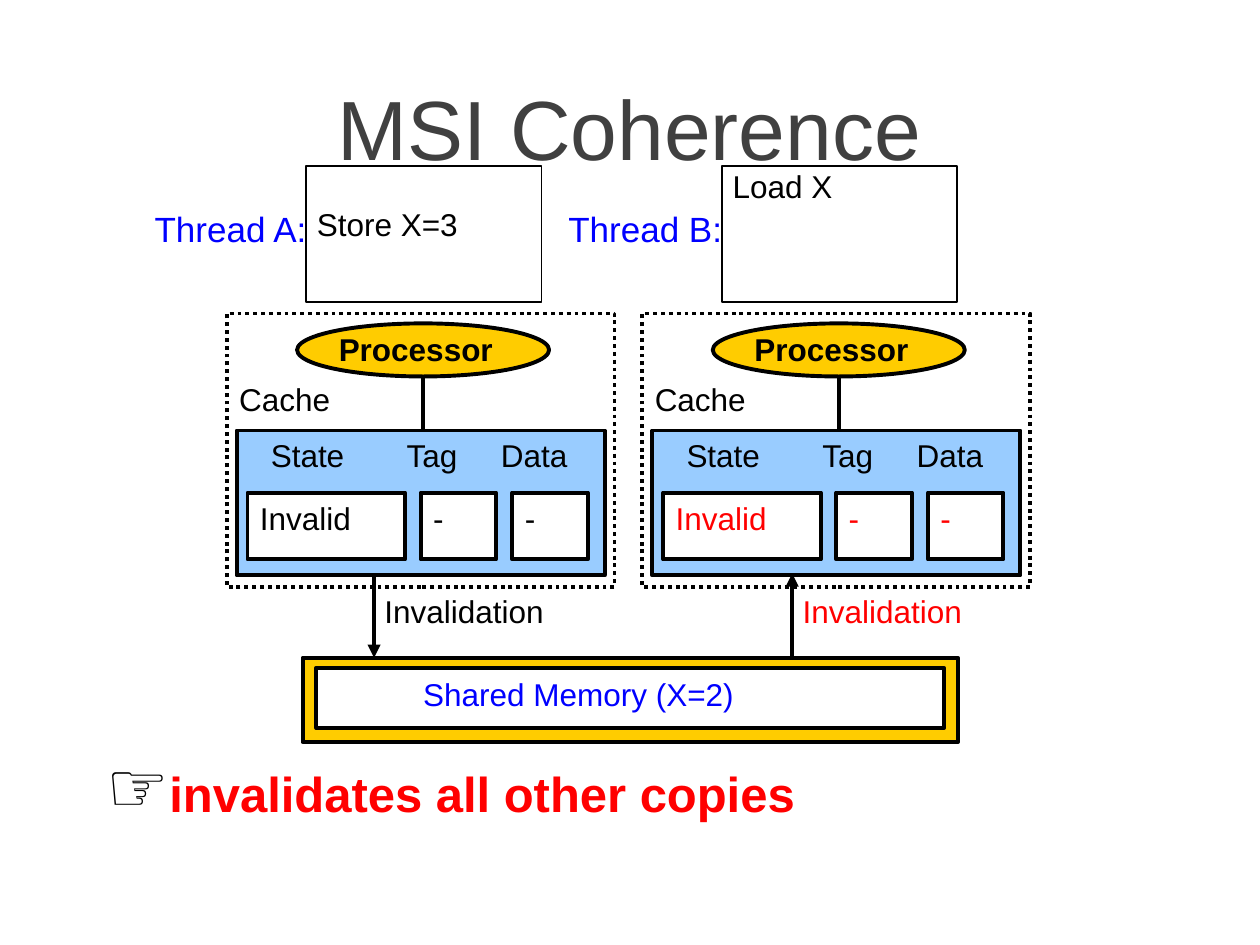
from lxml import etree
from pptx import Presentation
from pptx.dml.color import RGBColor
from pptx.enum import dml, shapes, text
from pptx.oxml import ns
from pptx.util import Cm, Pt

COLORS = {"black": "000000", "white": "FFFFFF", "gray": "404040", "gold": "FFCC00",
          "sky": "99CCFF", "blue": "0000FF", "red": "FF0000"}
PANEL_W, PANEL_H = 7.82, 5.51
MIDDLE = text.MSO_ANCHOR.MIDDLE


def rgb(name):
    return RGBColor.from_string(COLORS[name])


def add_run(p, content, size=18, color="black", bold=False, font="Arial"):
    r = p.add_run()
    r.text = content
    r.font.size = Pt(size)
    r.font.name = font
    r.font.bold = bold
    r.font.color.rgb = rgb(color)


def write(sp, content, align=text.PP_ALIGN.LEFT, anchor=text.MSO_ANCHOR.TOP, **style):
    tf = sp.text_frame
    tf.word_wrap = True
    tf.vertical_anchor = anchor
    p = tf.paragraphs[0]
    p.alignment = align
    add_run(p, content, **style)
    return p


def add_label(s, x, y, w, h, content, **style):
    return write(s.shapes.add_textbox(Cm(x), Cm(y), Cm(w), Cm(h)), content, **style)


def add_box(s, x, y, w, h, fill=None, width=2.25, kind=shapes.MSO_SHAPE.RECTANGLE):
    sp = s.shapes.add_shape(kind, Cm(x), Cm(y), Cm(w), Cm(h))
    sp.shadow.inherit = False
    if fill:
        sp.fill.solid()
        sp.fill.fore_color.rgb = rgb(fill)
    else:
        sp.fill.background()
    sp.line.color.rgb = rgb("black")
    sp.line.width = Pt(width)
    return sp


def add_link(s, x, start, end, width=2.25, arrow=False):
    sp = s.shapes.add_connector(shapes.MSO_CONNECTOR.STRAIGHT, Cm(x), Cm(start), Cm(x), Cm(end))
    sp.line.color.rgb = rgb("black")
    sp.line.width = Pt(width)
    if arrow:
        etree.SubElement(sp.line._get_or_add_ln(), ns.qn("a:tailEnd"), type="triangle")
    etree.SubElement(sp._element.spPr, ns.qn("a:effectLst"))


def add_cache(s, x, y, color):
    add_box(s, x, y, 7.42, 2.92, "sky")
    columns = [("State", 0.44, 2.59, "Invalid", 0.22, 3.18),
               ("Tag", 3.18, 2.46, "-", 3.71, 1.52),
               ("Data", 5.08, 2.46, "-", 5.56, 1.52)]
    for name, name_x, name_w, value, cell_x, cell_w in columns:
        write(add_box(s, x + cell_x, y + 1.25, cell_w, 1.35, "white"), value, color=color)
        add_label(s, x + name_x, y - 0.01, name_w, 1.27, name)


def add_processor(s, x, y, color):
    add_box(s, x + 1.42, y + 0.2, 5.08, 1.07, "gold", kind=shapes.MSO_SHAPE.OVAL)
    add_label(s, x, y + 1.22, 2.97, 1.27, "Cache")
    add_label(s, x + 2.01, y + 0.2, 3.61, 1.02, "Processor", bold=True, anchor=MIDDLE)
    frame = add_box(s, x, y, PANEL_W, PANEL_H)
    frame.line.dash_style = dml.MSO_LINE.ROUND_DOT
    add_cache(s, x + 0.2, y + 2.36, color)
    add_link(s, x + 3.96, y + 1.3, y + 2.36)


def add_thread(s, x, y, name, code, code_y):
    add_box(s, x + 1.6, y, 4.75, 2.74, width=1)
    add_label(s, x + 1.57, y + code_y, 4.29, 1.27, code)
    add_label(s, x - 1.75, y + 0.71, 3.61, 1.09, name,
              size=20, color="blue", align=text.PP_ALIGN.RIGHT)


def add_bus(s, x, y, color, upward):
    ends = (y, y + 1.7)
    add_link(s, x, *(reversed(ends) if upward else ends), width=2.5, arrow=True)
    add_label(s, x - 0.04, y + 0.26, 3.9, 1.02, "Invalidation", color=color)


def add_memory(s, x, y):
    add_box(s, x, y, 13.21, 1.7, "gold")
    add_box(s, x + 0.28, y + 0.2, 12.65, 1.22, "white")
    add_label(s, x + 2.18, y + 0.23, 8.86, 1.27, "Shared Memory (X=2)", color="blue")


def add_note(s, x, y):
    p = add_label(s, x, y, 14.6, 1.96, "☞", size=40, bold=True, font="Cabin", anchor=MIDDLE)
    add_run(p, "invalidates all other copies", size=28, color="red", bold=True)


def main():
    prs = Presentation()
    prs.slide_width, prs.slide_height = Cm(25.4), Cm(19.05)
    s = prs.slides.add_slide(prs.slide_layouts[6])
    add_label(s, 2.49, 0.69, 20.4, 3.73, "MSI Coherence", size=48, color="gray",
              align=text.PP_ALIGN.CENTER, anchor=MIDDLE)
    add_memory(s, 6.1, 13.26)
    threads = [("Thread A:", "Store X=3", 0.66, "black", 2.97, False),
               ("Thread B:", "Load X", -0.1, "red", 3.02, True)]
    for i, (name, code, code_y, color, bus_x, upward) in enumerate(threads):
        x = 4.57 + i * 8.38
        add_processor(s, x, 6.32, color)
        add_thread(s, x, 3.35, name, code, code_y)
        add_bus(s, x + bus_x, 11.56, color, upward)
    add_note(s, 1.9, 14.83)
    prs.save("out.pptx")


if __name__ == "__main__":
    main()
